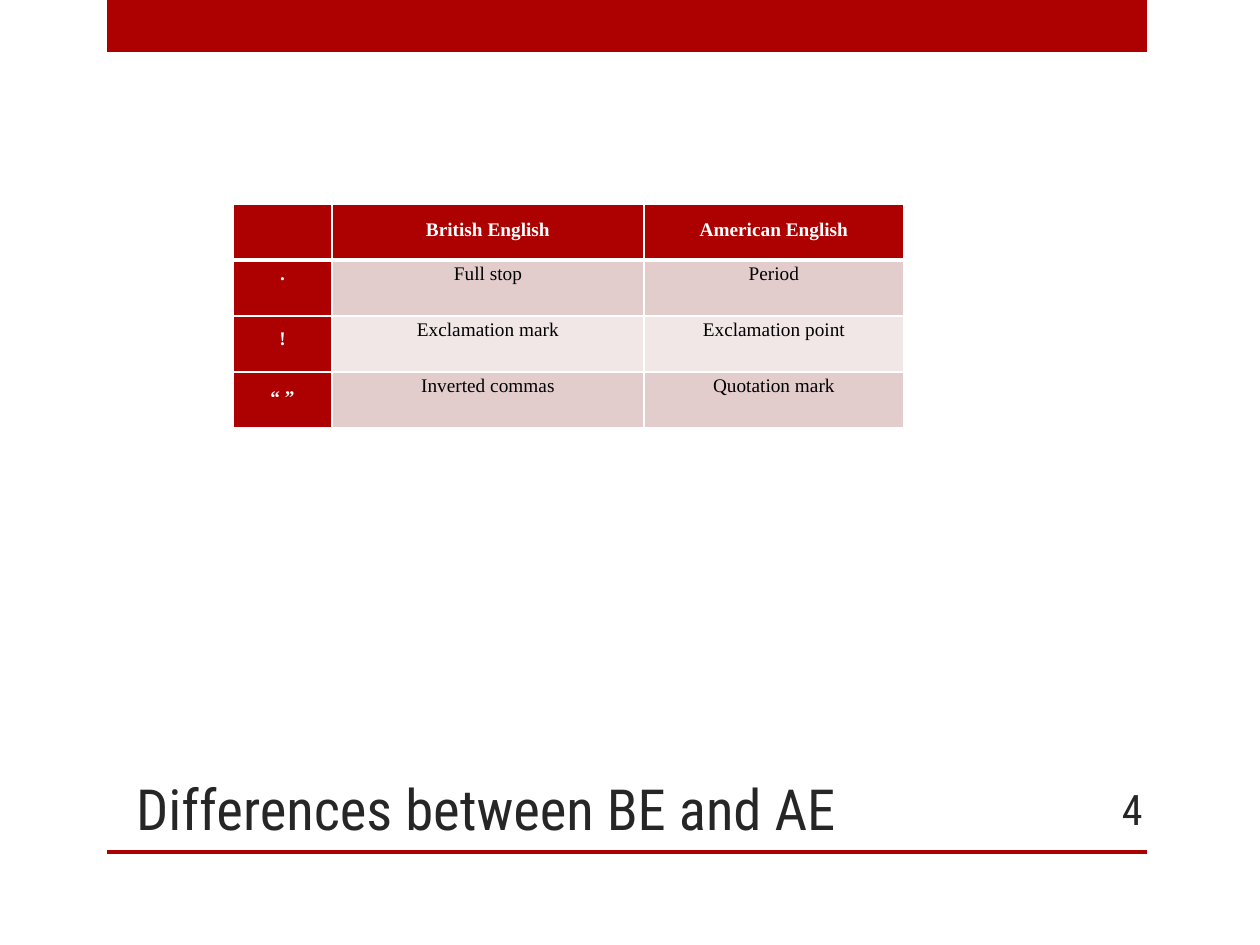
from dataclasses import dataclass

from lxml.etree import SubElement
from pptx import Presentation
from pptx.dml.color import RGBColor
from pptx.enum.shapes import MSO_SHAPE
from pptx.enum.text import MSO_ANCHOR, PP_ALIGN
from pptx.oxml.ns import qn
from pptx.util import Emu, Pt


@dataclass(frozen=True)
class Theme:
    red: str = "AD0101"
    ink: str = "262626"
    black: str = "000000"
    white: str = "FFFFFF"
    bands: tuple = ("E3CCCC", "F1E7E7")
    head: str = "Roboto Condensed"
    body: str = "Times New Roman"
    title: float = 32.4
    number: float = 24
    cell: float = 11


THEME = Theme()
COLS = (99, 312, 260)
ROWS = (
    ("", "British English", "American English"),
    (".", "Full stop", "Period"),
    ("!", "Exclamation mark", "Exclamation point"),
    ("“ ”", "Inverted commas", "Quotation mark"),
)
# Space above the first cell of each row, in px
PADS = (12, 0, 9, 12)


def px(n):
    return Emu(round(n * 914400 / 126))


def rgb(code):
    return RGBColor.from_string(code)


def style(para, face, size, color, bold=False):
    font = para.font
    font.name, font.size, font.bold = face, Pt(size), bold
    font.color.rgb = rgb(color)


def place(shape, box):
    shape.left, shape.top, shape.width, shape.height = map(px, box)


def add_bar(slide, box):
    bar = slide.shapes.add_shape(MSO_SHAPE.RECTANGLE, *map(px, box))
    bar.shadow.inherit = False
    bar.fill.solid()
    bar.fill.fore_color.rgb = rgb(THEME.red)
    bar.line.fill.background()


def add_title(slide, box, text):
    title = slide.shapes.title
    place(title, box)
    frame = title.text_frame
    frame.text = text
    frame.word_wrap = True
    frame.vertical_anchor = MSO_ANCHOR.BOTTOM
    frame.margin_left, frame.margin_bottom = px(31), px(9)
    para = frame.paragraphs[0]
    para.alignment = PP_ALIGN.LEFT
    style(para, THEME.head, THEME.title, THEME.ink)


def add_number(slide, box, text):
    frame = slide.shapes.add_textbox(*map(px, box)).text_frame
    frame.text = text
    frame.word_wrap = True
    frame.vertical_anchor = MSO_ANCHOR.MIDDLE
    para = frame.paragraphs[0]
    para.alignment = PP_ALIGN.RIGHT
    style(para, THEME.head, THEME.number, THEME.ink)


def set_edges(cell, top, bottom):
    # Borders must come before the fill in the cell properties
    props = cell._tc.get_or_add_tcPr()
    for tag, width in (("lnL", 1), ("lnR", 1), ("lnT", top), ("lnB", bottom)):
        line = SubElement(props, qn(f"a:{tag}"), w=str(Pt(width)))
        fill = SubElement(line, qn("a:solidFill"))
        SubElement(fill, qn("a:srgbClr"), val=THEME.white)


def fill_cell(cell, row, col, text):
    label = row == 0 or col == 0
    set_edges(cell, 3 if row == 1 else 1, 3 if row == 0 else 1)
    cell.fill.solid()
    back = THEME.red if label else THEME.bands[(row - 1) % 2]
    cell.fill.fore_color.rgb = rgb(back)
    cell.margin_left = cell.margin_right = px(9)
    cell.margin_top = px(PADS[row] if label else 0)
    cell.margin_bottom = 0
    cell.text = text
    para = cell.text_frame.paragraphs[0]
    para.alignment = PP_ALIGN.CENTER
    para.line_spacing = 1.15
    ink = THEME.white if label else THEME.black
    style(para, THEME.body, THEME.cell, ink, label)


def add_terms(slide, box):
    table = slide.shapes.add_table(len(ROWS), len(COLS), *map(px, box)).table
    for col, width in zip(table.columns, COLS):
        col.width = px(width)
    for r, texts in enumerate(ROWS):
        table.rows[r].height = px(box[3] // len(ROWS))
        for c, text in enumerate(texts):
            fill_cell(table.cell(r, c), r, c, text)


def main():
    deck = Presentation()
    deck.slide_width, deck.slide_height = px(1260), px(945)
    slide = deck.slides.add_slide(deck.slide_layouts[5])
    # Top band and footer rule
    add_bar(slide, (107, 0, 1040, 52))
    add_bar(slide, (107, 850, 1040, 4))
    # Title, table of terms and page number
    add_title(slide, (105, 731, 935, 120), "Differences between BE and AE")
    add_terms(slide, (233, 204, sum(COLS), 224))
    add_number(slide, (1050, 784, 105, 50), "4")
    deck.save("out.pptx")


if __name__ == "__main__":
    main()
